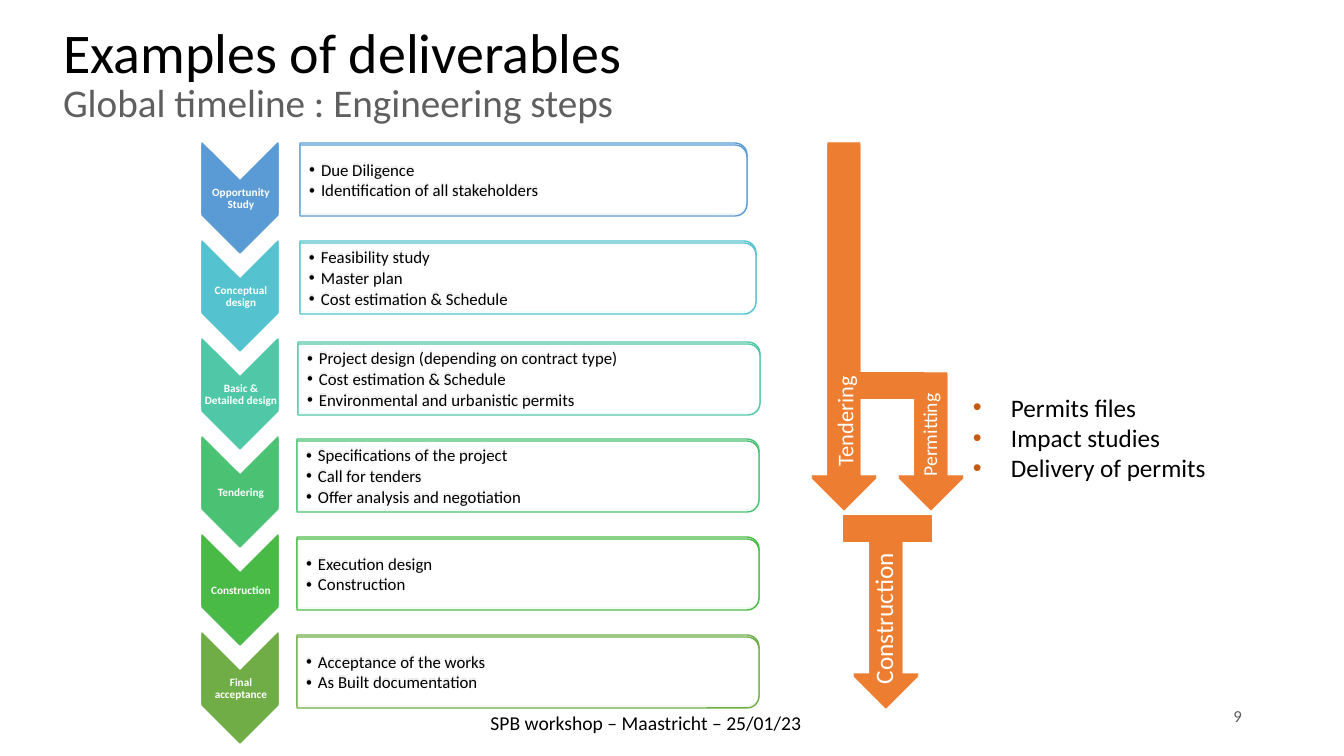
"""Build the slide on engineering steps and their deliverables."""
from lxml import etree
from pptx import Presentation
from pptx.dml.color import RGBColor
from pptx.enum.shapes import MSO_SHAPE
from pptx.enum.text import MSO_ANCHOR, PP_ALIGN
from pptx.oxml.ns import qn
from pptx.util import Emu, Pt

BLACK = RGBColor(0x00, 0x00, 0x00)
WHITE = RGBColor(0xFF, 0xFF, 0xFF)
GREY = RGBColor(0x5F, 0x5F, 0x5F)
ORANGE = RGBColor(0xED, 0x7D, 0x31)
RUST = RGBColor(0xC5, 0x5A, 0x11)
BLUE = RGBColor(0x5B, 0x9B, 0xD5)
CYAN = RGBColor(0x55, 0xC3, 0xCF)
TEAL = RGBColor(0x50, 0xC8, 0xA7)
MINT = RGBColor(0x4B, 0xC1, 0x74)
GREEN = RGBColor(0x4A, 0xBA, 0x46)
OLIVE = RGBColor(0x70, 0xAD, 0x47)
PX = 914400 / 100.8

STEPS = [
    ("Opportunity Study", BLUE, 300, 143, 447,
     ["Due Diligence", "Identification of all stakeholders"]),
    ("Conceptual design", CYAN, 300, 241, 456,
     ["Feasibility study", "Master plan", "Cost estimation & Schedule"]),
    ("Basic & Detailed design", TEAL, 298, 342, 462,
     ["Project design (depending on contract type)",
      "Cost estimation & Schedule", "Environmental and urbanistic permits"]),
    ("Tendering", MINT, 297, 439, 462,
     ["Specifications of the project", "Call for tenders",
      "Offer analysis and negotiation"]),
    ("Construction", GREEN, 297, 537, 462,
     ["Execution design", "Construction"]),
    ("Final acceptance", OLIVE, 297, 635, 462,
     ["Acceptance of the works", "As Built documentation"]),
]
FLOWS = [
    (MSO_SHAPE.DOWN_ARROW, 812, 143, 64, 365),
    (MSO_SHAPE.DOWN_ARROW, 899, 373, 64, 135),
    (MSO_SHAPE.RECTANGLE, 836, 373, 88, 24),
    (MSO_SHAPE.RECTANGLE, 844, 516, 88, 24),
    (MSO_SHAPE.DOWN_ARROW, 854, 532, 64, 174),
]
LABELS = [
    ("Tendering", 16, 773, 384, 143, 37),
    ("Permitting", 14, 858, 396, 143, 34),
    ("Construction", 18, 752, 541, 262, 40),
]


def draw(home, kind, box, fill, line, width, turn=0):
    """Add a filled preset shape, turned about its centre."""
    shape = home.add_shape(kind, *[Emu(round(n * PX)) for n in box])
    shape.shadow.inherit = False
    shape.fill.solid()
    shape.fill.fore_color.rgb = fill
    shape.line.color.rgb = line
    shape.line.width = Pt(width)
    shape.rotation = turn
    return shape


def write(shape, box, lines, size, color, align=PP_ALIGN.LEFT, mid=False,
          pad=(10, 5), space=1.0, after=0, bold=False, dent=0, dot=None):
    """Place a text shape and fill it with one paragraph per line."""
    shape.left, shape.top, shape.width, shape.height = [
        Emu(round(n * PX)) for n in box]
    frame = shape.text_frame
    frame.word_wrap = True
    frame.vertical_anchor = MSO_ANCHOR.MIDDLE if mid else MSO_ANCHOR.TOP
    frame.margin_left = Emu(round(pad[0] * PX))
    frame.margin_right = Emu(round(min(pad[0], pad[1] * 2) * PX))
    frame.margin_top = frame.margin_bottom = Emu(round(pad[1] * PX))
    for i, text in enumerate(lines):
        para = frame.add_paragraph() if i else frame.paragraphs[0]
        para.alignment = align
        para.line_spacing = space
        para.space_before = Pt(0)
        para.space_after = Pt(after)
        run = para.add_run()
        run.text = text
        run.font.name = "Calibri"
        run.font.size = Pt(size)
        run.font.bold = bold
        run.font.color.rgb = color
        if dent:
            props = para._p.get_or_add_pPr()
            props.set("marL", str(round(dent * PX)))
            props.set("indent", str(round(-dent * PX)))
            if dot:
                tint = etree.SubElement(props, qn("a:buClr"))
                etree.SubElement(tint, qn("a:srgbClr"), val=str(dot))
            etree.SubElement(props, qn("a:buFont"), typeface="Arial")
            etree.SubElement(props, qn("a:buChar"), char="•")


deck = Presentation()
deck.slide_width = Emu(round(1344 * PX))
deck.slide_height = Emu(round(756 * PX))
slide = deck.slides.add_slide(deck.slide_layouts[5])
shapes = slide.shapes

write(shapes.add_textbox(0, 0, 0, 0), (950, 696, 302, 40), ["9"], 12, GREY,
      PP_ALIGN.RIGHT, mid=True)
write(shapes.add_textbox(0, 0, 0, 0), (310, 706, 672, 34),
      ["SPB workshop – Maastricht – 25/01/23"], 14, BLACK, PP_ALIGN.CENTER)
write(shapes.add_textbox(0, 0, 0, 0), (53, 79, 1219, 67),
      ["Global timeline : Engineering steps"], 28, GREY, PP_ALIGN.JUSTIFY,
      space=0.9)
write(shapes.title, (53, 2, 1047, 106), ["Examples of deliverables"], 40,
      BLACK, mid=True, space=0.9)

for drop in (0, 2):
    group = shapes.add_group_shape().shapes
    for i, (name, color, x, y, wide, items) in enumerate(STEPS):
        top = 159 + 98 * i + drop
        draw(group, MSO_SHAPE.CHEVRON, (186, top, 108, 76), color, color, 1, 90)
        write(group.add_textbox(0, 0, 0, 0), (203, top + 22, 76, 32), [name],
              8, WHITE, PP_ALIGN.CENTER, True, (1, 1), 0.9, 2.8, True)
        y += drop
        card = draw(group, MSO_SHAPE.ROUND_2_SAME_RECTANGLE,
                    (x + (wide - 71) / 2, y + (71 - wide) / 2, 71, wide),
                    WHITE, color, 1, 90)
        tint = card.fill._xPr.find(qn("a:solidFill"))[0]
        etree.SubElement(tint, qn("a:alpha"), val="90000")
        write(group.add_textbox(0, 0, 0, 0), (x, y + 4, wide - 4, 64), items,
              12, BLACK, mid=True, pad=(9, 1), space=0.9, after=1.8, dent=12)
    for kind, x, y, wide, high in FLOWS:
        draw(group, kind, (x, y + drop, wide, high), ORANGE, ORANGE, 0.75)
    for name, size, x, y, wide, high in LABELS:
        label = group.add_textbox(0, 0, 0, 0)
        label.rotation = 270
        write(label, (x, y + drop, wide, high), [name], size, WHITE)

write(shapes.add_textbox(0, 0, 0, 0), (963, 387, 334, 102),
      ["Permits files", "Impact studies", "Delivery of permits"], 18, BLACK,
      dent=38, dot=RUST)

deck.save("out.pptx")
